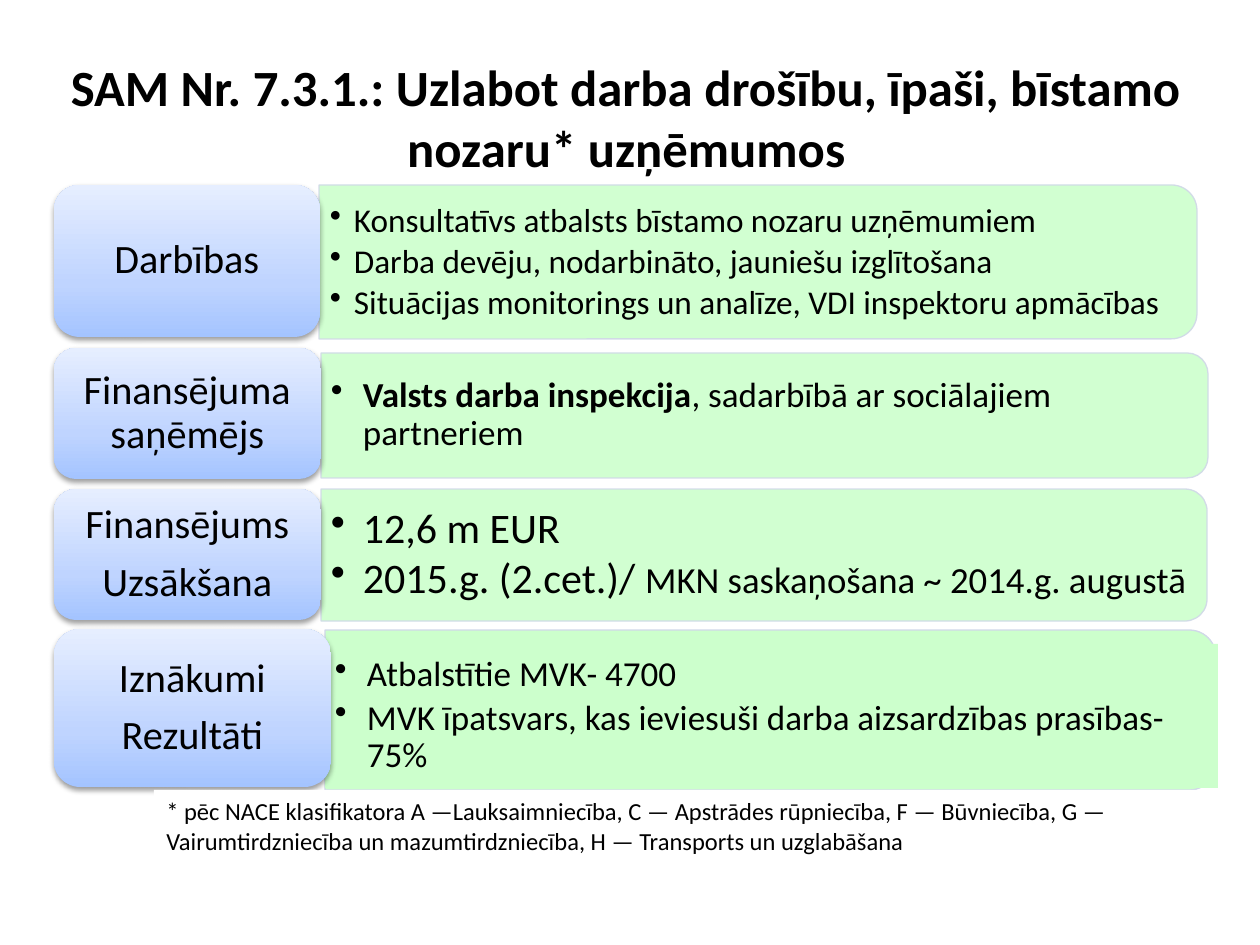
from dataclasses import dataclass
from lxml import etree
from pptx import Presentation
from pptx.dml.color import RGBColor
from pptx.enum.shapes import MSO_SHAPE
from pptx.enum.text import MSO_ANCHOR, PP_ALIGN
from pptx.oxml.ns import qn
from pptx.util import Emu, Pt

MIDDLE = MSO_ANCHOR.MIDDLE
CENTER = PP_ALIGN.CENTER
LEFT = PP_ALIGN.LEFT
ROUNDED = MSO_SHAPE.ROUNDED_RECTANGLE
TOP_ROUNDED = MSO_SHAPE.ROUND_2_SAME_RECTANGLE
EMU_PER_PX = 914400 / 126


@dataclass(frozen=True)
class Theme:
    font: str = "Calibri"
    text: str = "000000"
    background: str = "FFFFFF"
    panel: str = "CCFFCC"
    panel_line: str = "D0D8E8"
    gradient: tuple = ((0, "A4C4FF"), (35, "BFD4FF"), (100, "E6EEFF"))
    title_size: int = 29
    label_size: int = 23
    note_size: int = 14


theme = Theme()


def px(*lengths):
    return [Emu(round(length * EMU_PER_PX)) for length in lengths]


def style_run(run, size, bold=False):
    run.font.name = theme.font
    run.font.size = Pt(size)
    run.font.bold = bold
    run.font.color.rgb = RGBColor.from_string(theme.text)


presentation = Presentation()
presentation.slide_width, presentation.slide_height = px(1260, 945)
slide = presentation.slides.add_slide(presentation.slide_layouts[5])

title = slide.shapes.title
title.left, title.top, title.width, title.height = px(35, 38, 1183, 158)
title.text_frame.text = "SAM Nr. 7.3.1.: Uzlabot darba drošību, īpaši, bīstamo nozaru* uzņēmumos"
title.text_frame.vertical_anchor = MIDDLE
title.text_frame.paragraphs[0].alignment = CENTER
style_run(title.text_frame.paragraphs[0].runs[0], theme.title_size, True)

rows = [
    {
        "label": ["Darbības"],
        "label_box": (54, 185, 266, 152),
        "panel_box": (319, 185, 878, 154),
        "list_box": (320, 193, 871, 139),
        "indent": 24,
        "opaque": False,
        "bullets": [
            [("Konsultatīvs atbalsts bīstamo nozaru uzņēmumiem", 19, False)],
            [("Darba devēju, nodarbināto, jauniešu izglītošana", 19, False)],
            [("Situācijas monitorings un analīze, VDI inspektoru apmācības", 19, False)],
        ],
    },
    {
        "label": ["Finansējuma saņēmējs"],
        "label_box": (54, 348, 267, 131),
        "panel_box": (321, 353, 887, 125),
        "list_box": (321, 359, 881, 112),
        "indent": 32,
        "opaque": False,
        "bullets": [
            [("Valsts darba inspekcija", 20, True), (", sadarbībā ar sociālajiem partneriem", 20, False)],
        ],
    },
    {
        "label": ["Finansējums", "Uzsākšana"],
        "label_box": (54, 489, 267, 131),
        "panel_box": (321, 489, 886, 132),
        "list_box": (321, 495, 880, 120),
        "indent": 32,
        "opaque": False,
        "bullets": [
            [("12,6 m EUR", 24, False)],
            [("2015.g. (2.cet.)/ ", 24, False), ("MKN saskaņošana ~ 2014.g. augustā", 21, False)],
        ],
    },
    {
        "label": ["Iznākumi", "Rezultāti"],
        "label_box": (54, 629, 277, 158),
        "panel_box": (325, 630, 891, 160),
        "list_box": (325, 644, 893, 144),
        "indent": 32,
        "opaque": True,
        "bullets": [
            [("Atbalstītie MVK- 4700", 20, False)],
            [("MVK īpatsvars, kas ieviesuši darba aizsardzības prasības- 75%", 20, False)],
        ],
    },
]

for row in rows:
    left, top, width, height = row["panel_box"]
    panel_left = left + (width - height) / 2
    panel_top = top - (width - height) / 2
    panel = slide.shapes.add_shape(TOP_ROUNDED, *px(panel_left, panel_top, height, width))
    panel.rotation = 90
    panel.shadow.inherit = False
    panel.fill.solid()
    panel.fill.fore_color.rgb = RGBColor.from_string(theme.panel)
    panel.line.color.rgb = RGBColor.from_string(theme.panel_line)
    panel.line.width = Pt(0.75)
    if not row["opaque"]:
        for color in panel._element.spPr.iter(qn("a:srgbClr")):
            etree.SubElement(color, qn("a:alpha"), val="90000")

    list_box = slide.shapes.add_textbox(*px(*row["list_box"]))
    if row["opaque"]:
        list_box.fill.solid()
        list_box.fill.fore_color.rgb = RGBColor.from_string(theme.panel)
    frame = list_box.text_frame
    frame.word_wrap = True
    frame.vertical_anchor = MIDDLE
    frame.margin_left, frame.margin_right, frame.margin_top, frame.margin_bottom = px(10, 10, 5, 5)
    for index, bullet in enumerate(row["bullets"]):
        paragraph = frame.paragraphs[0] if index == 0 else frame.add_paragraph()
        paragraph.line_spacing = 0.9
        paragraph.space_after = Pt(3)
        properties = paragraph._p.get_or_add_pPr()
        indent = px(row["indent"])[0]
        properties.set("marL", str(indent))
        properties.set("indent", str(-indent))
        etree.SubElement(properties, qn("a:buChar"), char="•")
        for text, size, bold in bullet:
            run = paragraph.add_run()
            run.text = text
            style_run(run, size, bold)

    label = slide.shapes.add_shape(ROUNDED, *px(*row["label_box"]))
    label.fill.gradient()
    label.fill.gradient_angle = 90
    stops = label._element.spPr.find(".//" + qn("a:gsLst"))
    for stop in list(stops):
        stops.remove(stop)
    for position, color in theme.gradient:
        stop = etree.SubElement(stops, qn("a:gs"), pos=str(position * 1000))
        etree.SubElement(stop, qn("a:srgbClr"), val=color)
    label.line.fill.background()
    label.shadow.inherit = False
    effects = label._element.spPr.find(qn("a:effectLst"))
    shadow = etree.SubElement(
        effects, qn("a:outerShdw"), blurRad="40000", dist="20000", dir="5400000", rotWithShape="0"
    )
    shadow_color = etree.SubElement(shadow, qn("a:srgbClr"), val=theme.text)
    etree.SubElement(shadow_color, qn("a:alpha"), val="38000")
    frame = label.text_frame
    frame.word_wrap = True
    frame.vertical_anchor = MIDDLE
    frame.text = "\n".join(row["label"])
    for paragraph in frame.paragraphs:
        paragraph.alignment = CENTER
        paragraph.line_spacing = 0.9
        paragraph.space_after = Pt(8)
        style_run(paragraph.runs[0], theme.label_size)

note = slide.shapes.add_textbox(*px(154, 790, 1042, 72))
note.fill.solid()
note.fill.fore_color.rgb = RGBColor.from_string(theme.background)
note.text_frame.word_wrap = True
note.text_frame.text = (
    "* pēc NACE klasifikatora A —Lauksaimniecība, C — Apstrādes rūpniecība, F — Būvniecība, "
    "G — Vairumtirdzniecība un mazumtirdzniecība, H — Transports un uzglabāšana"
)
note.text_frame.paragraphs[0].alignment = LEFT
style_run(note.text_frame.paragraphs[0].runs[0], theme.note_size)

presentation.save("out.pptx")
